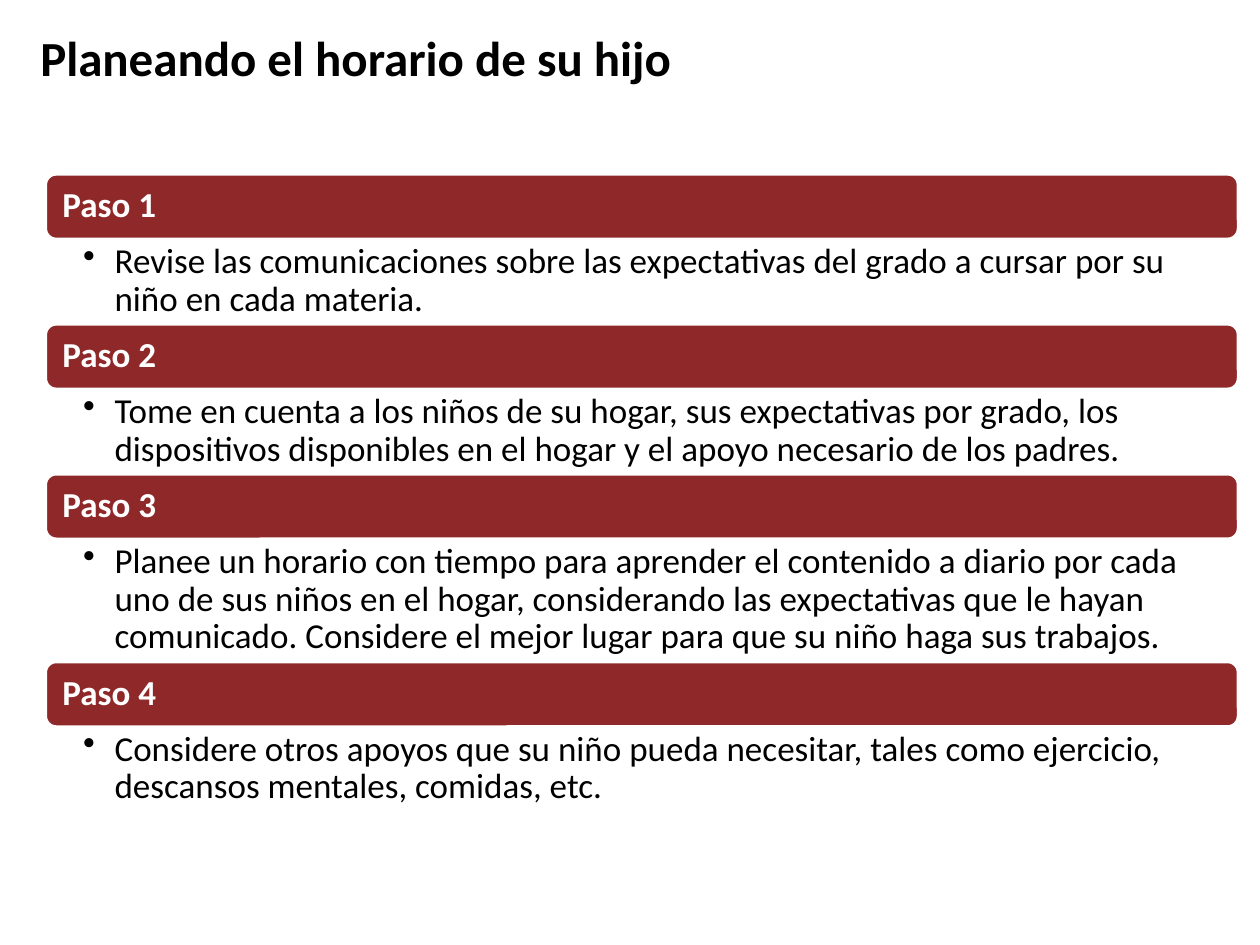
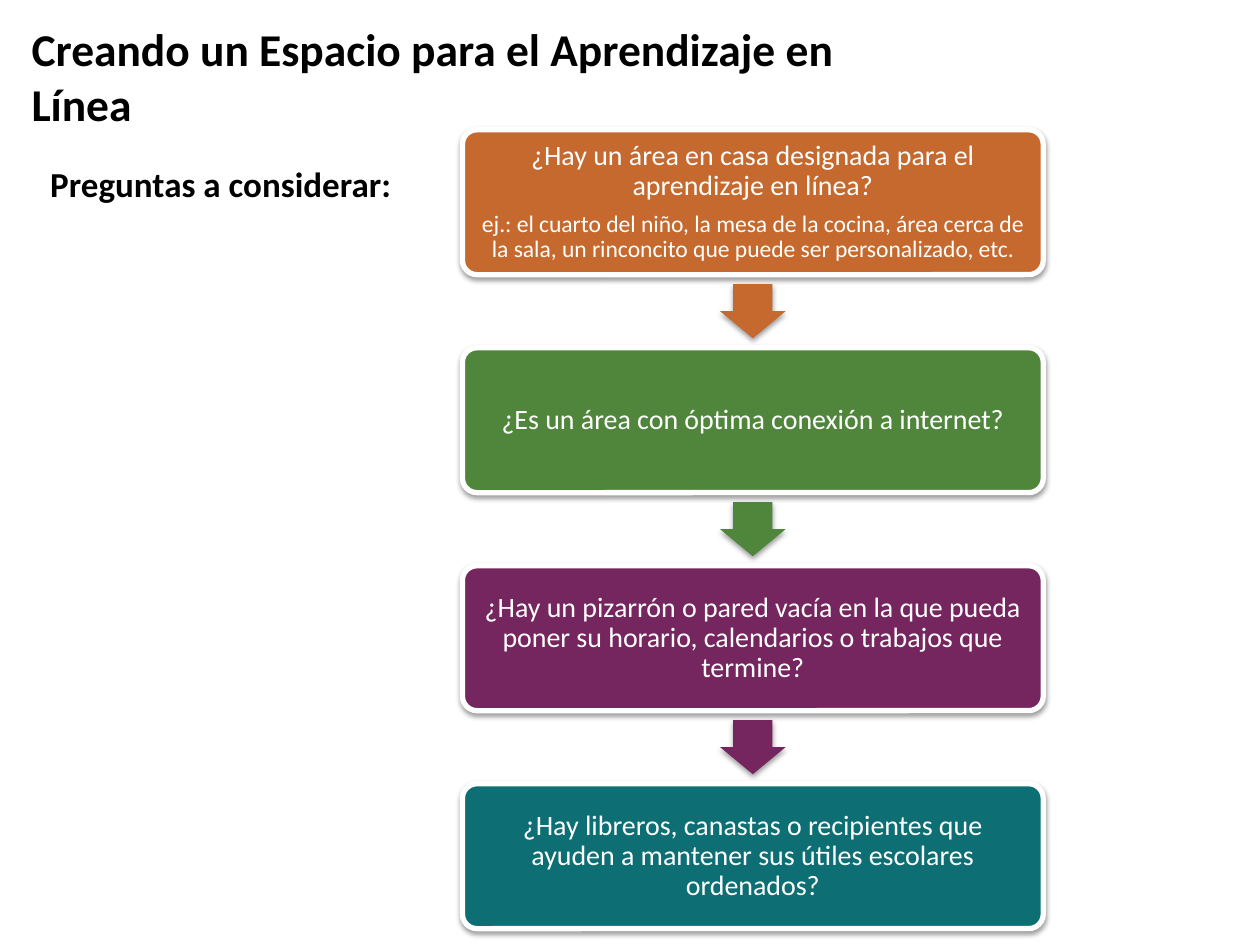
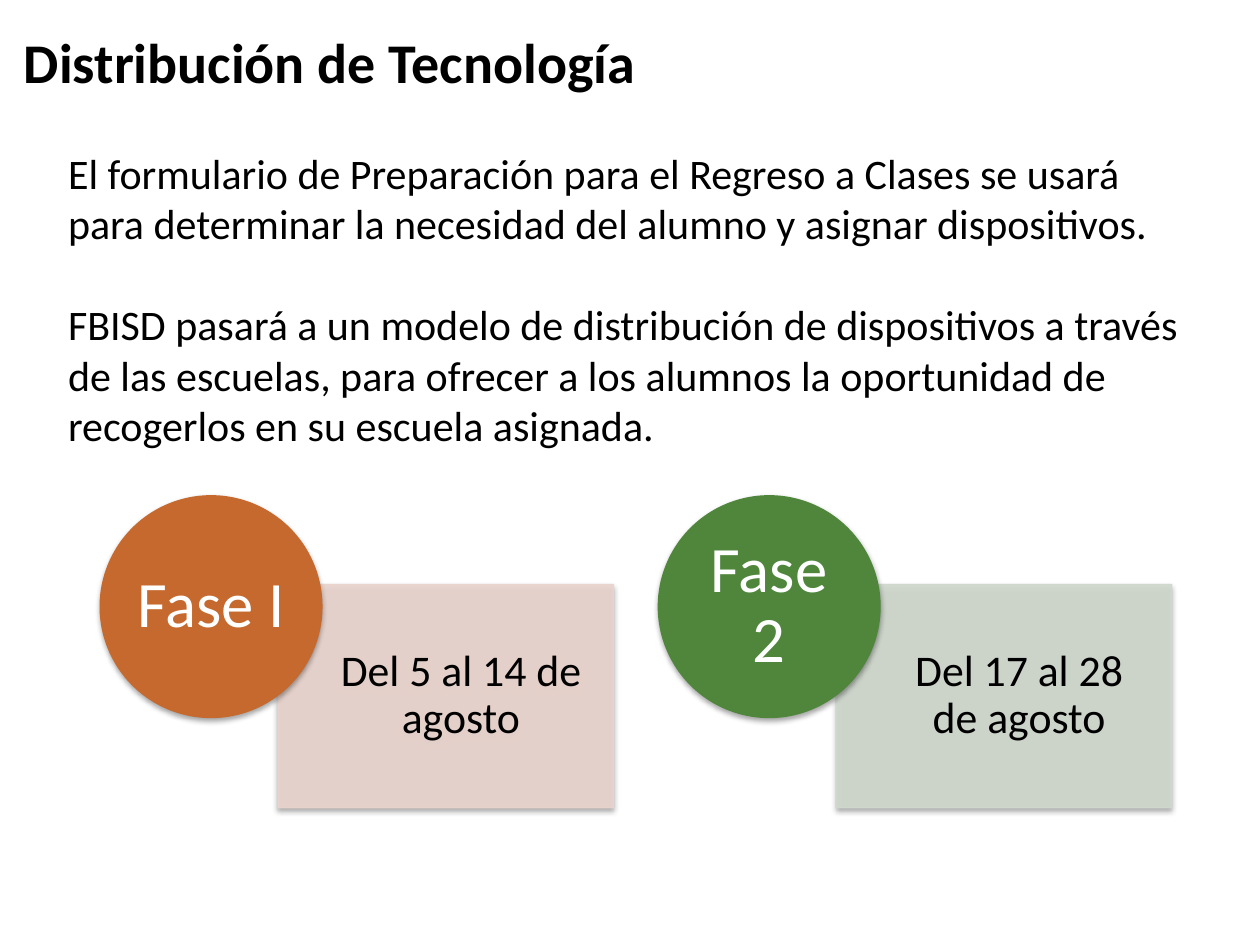
from pptx import Presentation
from pptx import util as u
from pptx.dml.color import RGBColor
from pptx.enum import shapes, text
from pptx.oxml import ns
from lxml import etree

WIDE, HIGH = u.Inches(10), u.Inches(7.5)
COL, ROW = WIDE / 100, HIGH / 75  # grid of 100 columns and 75 rows
FONT = "Calibri"
HUES = {
    "ink": "000000", "white": "FFFFFF", "red": "8F2829",
    "rust": "C5692E", "green": "4F863C", "plum": "76265F", "teal": "0D6F74",
    "blush": "EAD4CD", "sage": "D0D9CE",
}
KIND = shapes.MSO_SHAPE
MID, TOP = text.MSO_ANCHOR.MIDDLE, text.MSO_ANCHOR.TOP
LEFT, CENTER = text.PP_ALIGN.LEFT, text.PP_ALIGN.CENTER

STEPS = [  # text and its number of lines
    ("Revise las comunicaciones sobre las expectativas del grado a cursar por su "
     "niño en cada materia.", 2),
    ("Tome en cuenta a los niños de su hogar, sus expectativas por grado, los "
     "dispositivos disponibles en el hogar y el apoyo necesario de los padres.", 2),
    ("Planee un horario con tiempo para aprender el contenido a diario por cada "
     "uno de sus niños en el hogar, considerando las expectativas que le hayan "
     "comunicado. Considere el mejor lugar para que su niño haga sus trabajos.", 3),
    ("Considere otros apoyos que su niño pueda necesitar, tales como ejercicio, "
     "descansos mentales, comidas, etc.", 2),
]
ASKS = [
    ("rust", [("¿Hay un área en casa designada para el aprendizaje en línea?", 16),
              ("ej.: el cuarto del niño, la mesa de la cocina, área cerca de la sala, "
               "un rinconcito que puede ser personalizado, etc.", 13.5)]),
    ("green", [("¿Es un área con óptima conexión a internet?", 16)]),
    ("plum", [("¿Hay un pizarrón o pared vacía en la que pueda poner su horario, "
               "calendarios o trabajos que termine?", 16)]),
    ("teal", [("¿Hay libreros, canastas o recipientes que ayuden a mantener sus "
               "útiles escolares ordenados?", 16)]),
]
NOTES = [
    "El formulario de Preparación para el Regreso a Clases se usará para determinar "
    "la necesidad del alumno y asignar dispositivos.",
    "FBISD pasará a un modelo de distribución de dispositivos a través de las escuelas, "
    "para ofrecer a los alumnos la oportunidad de recogerlos en su escuela asignada.",
]
PHASES = [
    ("Fase I", "rust", "Del 5 al 14 de agosto", "blush"),
    ("Fase 2", "green", "Del 17 al 28 de agosto", "sage"),
]


def grid(x, y, w, h):
    return [u.Emu(round(n)) for n in (x * COL, y * ROW, w * COL, h * ROW)]


def rgb(hue):
    return RGBColor.from_string(HUES[hue])


def write(shape, paras, hue="ink", bold=False, align=LEFT, lead=1.0, gap=0,
          pads=(0.1, 0.05, 0.1, 0.05), anchor=MID, mark=None):
    """Fill a shape with (text, size) paragraphs; pads are left, top, right, bottom."""
    frame = shape.text_frame
    frame.word_wrap = True
    frame.auto_size = text.MSO_AUTO_SIZE.NONE
    frame.vertical_anchor = anchor
    (frame.margin_left, frame.margin_top,
     frame.margin_right, frame.margin_bottom) = map(u.Inches, pads)
    for i, (line, size) in enumerate(paras):
        para = frame.add_paragraph() if i else frame.paragraphs[0]
        props = para._p.get_or_add_pPr()
        hang = u.Inches(0.25) if mark else 0
        props.set("marL", str(hang))
        props.set("indent", str(-hang))
        if mark:
            etree.SubElement(props, ns.qn("a:buChar")).set("char", mark)
        else:
            etree.SubElement(props, ns.qn("a:buNone"))
        para.alignment = align
        para.line_spacing = lead
        para.space_before = u.Pt(gap if i else 0)
        run = para.add_run()
        run.text = line
        font = run.font
        font.name, font.size, font.bold = FONT, u.Pt(size), bold
        font.color.rgb = rgb(hue)


def fade(node, share):
    etree.SubElement(node, ns.qn("a:alpha")).set("val", str(share * 1000))


def shade(shape, share, dist):
    """Give a shape a soft shadow straight below it."""
    glow = etree.SubElement(shape._element.spPr.find(ns.qn("a:effectLst")),
                            ns.qn("a:outerShdw"))
    for key, val in (("blurRad", u.Pt(3.1)), ("dist", u.Pt(dist)),
                     ("dir", 90 * 60000), ("algn", "ctr"), ("rotWithShape", 0)):
        glow.set(key, str(val))
    tint = etree.SubElement(glow, ns.qn("a:srgbClr"))
    tint.set("val", HUES["ink"])
    fade(tint, share)


def draw(slide, kind, box, hue, edge=None, width=1):
    shape = slide.shapes.add_shape(kind, *grid(*box))
    shape.shadow.inherit = False
    shape.fill.solid()
    shape.fill.fore_color.rgb = rgb(hue)
    if edge:
        shape.line.color.rgb = rgb(edge)
        shape.line.width = u.Pt(width)
    else:
        shape.line.fill.background()
    return shape


def place(shape, box):
    shape.left, shape.top, shape.width, shape.height = grid(*box)


def start(deck, layout, title, box, size, **style):
    """Add a slide with its bold title."""
    slide = deck.slides.add_slide(deck.slide_layouts[layout])
    place(slide.shapes.title, box)
    write(slide.shapes.title, [(title, size)], bold=True, **style)
    return slide


def steps(slide, box):
    """Red bars, each followed by a bulleted text."""
    x, y, w, bar = box
    for i, (line, count) in enumerate(STEPS, 1):
        band = draw(slide, KIND.ROUNDED_RECTANGLE, (x, y, w, bar), "red", "white", 2)
        write(band, [(f"Paso {i}", 20)], "white", bold=True, lead=0.9,
              pads=(0.11, 0.08, 0.11, 0.08))
        y += bar
        tall = 3 * count + 0.7
        body = slide.shapes.add_textbox(*grid(x, y, w, tall))
        write(body, [(line, 20)], lead=0.9, pads=(0.3, 0.03, 0.16, 0.03),
              anchor=TOP, mark="•")
        y += tall


def flow(slide, box):
    """Question cards in a column, with an arrow in each gap."""
    x, y, w, h = box
    gap, wide, tall = 5.8, 5.2, 4.3
    for i, (hue, paras) in enumerate(ASKS):
        top = y + i * (h + gap)
        card = draw(slide, KIND.ROUNDED_RECTANGLE, (x, top, w, h), hue, "white", 3)
        card.adjustments[0] = 0.1
        shade(card, 38, 1.6)
        write(card, paras, "white", align=CENTER, lead=0.9, gap=5.6, pads=[0.11] * 4)
        if i < len(ASKS) - 1:
            arrow = draw(slide, KIND.DOWN_ARROW,
                         (x + (w - wide) / 2, top + h + (gap - tall) / 2, wide, tall), hue)
            arrow.adjustments[0], arrow.adjustments[1] = 0.6, 0.5
            shade(arrow, 38, 1.6)


def phase(slide, box, name, hue, dates, pale):
    """A disc over the corner of a dated panel."""
    x, y, w, h = box
    disc = 17.7
    panel = draw(slide, KIND.RECTANGLE,
                 (x + 0.8 * disc, y + 0.4 * disc, w - 0.8 * disc, h - 0.4 * disc),
                 pale, pale, 0.75)
    for node in panel._element.spPr.iter(ns.qn("a:srgbClr")):
        fade(node, 90)
    shade(panel, 35, 1.8)
    write(panel, [(dates, 25)], align=CENTER, lead=0.9, pads=(0.43, 0.19, 0.19, 0.19))
    ball = draw(slide, KIND.OVAL, (x, y, disc, disc), hue)
    shade(ball, 35, 1.8)
    write(ball, [(name, 37)], "white", align=CENTER, lead=0.9, pads=[0] * 4)


def main():
    deck = Presentation()
    deck.slide_width, deck.slide_height = WIDE, HIGH

    # Schedule
    slide = start(deck, 5, "Planeando el horario de su hijo", (2.2, 0, 74.1, 9.7), 28,
                  lead=0.9)
    steps(slide, (3.6, 13.8, 94.7, 5.2))

    # Space for learning
    slide = start(deck, 5, "Creando un Espacio para el Aprendizaje en Línea",
                  (1.5, 1.2, 73.6, 9.8), 26, anchor=TOP)
    label = slide.shapes.add_textbox(*grid(3, 12.4, 32.8, 4.3))
    write(label, [("Preguntas a considerar:", 20)], bold=True, anchor=TOP)
    flow(slide, (36.7, 10.3, 46.1, 11.5))

    # Devices
    slide = start(deck, 1, "Distribución de Tecnología", (0.9, 1.7, 58, 6.3), 32,
                  anchor=TOP)
    body = slide.placeholders[1]
    place(body, (4.4, 11.2, 92.2, 25.6))
    write(body, [(line, 24) for line in NOTES], gap=29, anchor=TOP)
    for i, item in enumerate(PHASES):
        phase(slide, (7.9 + 44.3 * i, 39.3, 40.8, 24.8), *item)

    deck.save("out.pptx")


if __name__ == "__main__":
    main()
